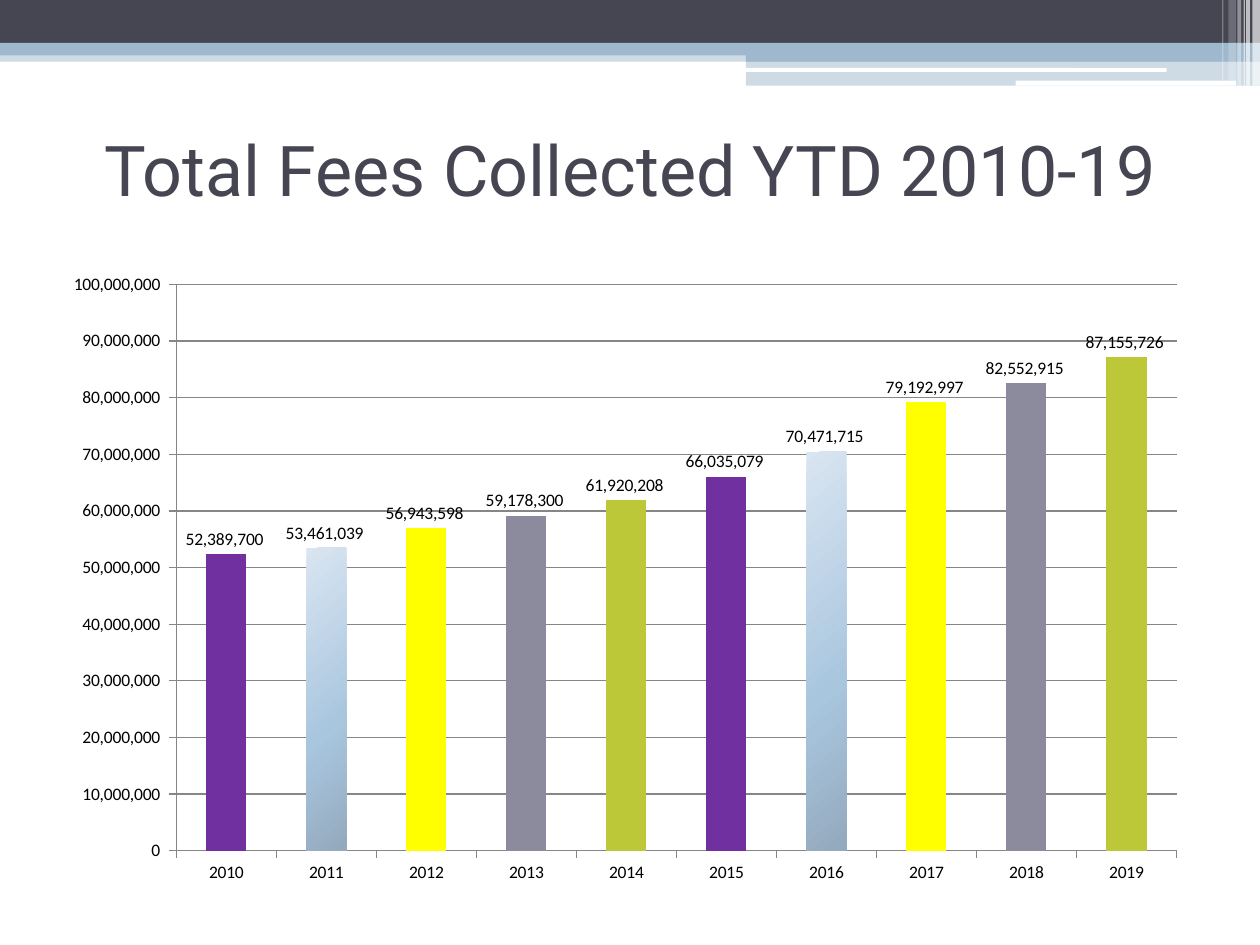
"""Build the slide with the yearly fee totals as a column chart."""
import copy

import pptx
import pptx.chart.data
import pptx.dml.color
import pptx.enum.chart
import pptx.enum.shapes
import pptx.enum.text
import pptx.oxml
import pptx.oxml.ns
import pptx.util
from lxml import etree

WIDTH, HEIGHT = 10, 7.5
TITLE = "Total Fees Collected YTD 2010-19"
INK, SKY, WHITE, AXIS = "464653", "9FB8CD", "FFFFFF", "868686"
NUMBER_FORMAT = "#,##0_);\\(#,##0\\)"
FEES = {
    "2010": 52389700, "2011": 53461039, "2012": 56943598, "2013": 59178300,
    "2014": 61920208, "2015": 66035079, "2016": 70471715, "2017": 79192997,
    "2018": 82552915, "2019": 87155726,
}
GRADIENT = [(0, "D9E5F1"), (0.6, "A9C6DF"), (1, "93A9BD")]
COLUMN_CYCLE = ["7030A0", GRADIENT, "FFFF00", "8B8B9D", "BCC838"]
PLOT_AREA = {"x": 0.1, "y": 0.064, "w": 0.882, "h": 0.853}
BANDS = [
    (0, 0.4, 10, 0.09, SKY, 50),
    (0, 0, 10, 0.34, INK, 100),
    (0, 0.34, 10, 0.1, SKY, 100),
    (5.92, 0.39, 4.08, 0.1, SKY, 100),
    (5.92, 0.48, 4.08, 0.2, SKY, 50),
]
ROUNDED_LINES = [(5.91, 0.54, 3.35, 0.03, WHITE, 100), (8.06, 0.64, 1.75, 0.04, WHITE, 100)]
STRIPES = [
    (9.94, 0.06, 0.68, 65), (9.89, 0.03, 0.68, 65), (9.87, 0.01, 0.68, 60),
    (9.82, 0.03, 0.68, 40), (9.75, 0.06, 0.64, 20), (9.7, 0.01, 0.64, 30),
]


def color(value):
    return pptx.dml.color.RGBColor.from_string(value)


def box(*lengths):
    return [pptx.util.Inches(length) for length in lengths]


def style_font(font, name, size, value):
    font.name, font.size = name, pptx.util.Pt(size)
    font.color.rgb = color(value)


def add_bar(slide, kind, left, top, width, height, fill, opacity):
    shape = slide.shapes.add_shape(kind, *box(left, top, width, height))
    shape.shadow.inherit = False
    shape.line.fill.background()
    shape.fill.solid()
    shape.fill.fore_color.rgb = color(fill)
    if opacity < 100:
        rgb = shape.fill._xPr.find(".//" + pptx.oxml.ns.qn("a:srgbClr"))
        etree.SubElement(rgb, pptx.oxml.ns.qn("a:alpha"), val=str(opacity * 1000))


def add_header(slide):
    shapes = pptx.enum.shapes.MSO_SHAPE
    for band in BANDS:
        add_bar(slide, shapes.RECTANGLE, *band)
    for line in ROUNDED_LINES:
        add_bar(slide, shapes.ROUNDED_RECTANGLE, *line)
    for left, width, height, opacity in STRIPES:
        add_bar(slide, shapes.RECTANGLE, left, 0, width, height, WHITE, opacity)


def add_title(slide):
    frame = slide.shapes.add_textbox(*box(0.5, 0.75, 9, 1.17)).text_frame
    frame.word_wrap = True
    frame.vertical_anchor = pptx.enum.text.MSO_ANCHOR.MIDDLE
    frame.text = TITLE
    paragraph = frame.paragraphs[0]
    paragraph.alignment = pptx.enum.text.PP_ALIGN.CENTER
    style_font(paragraph.runs[0].font, "Roboto", 40, INK)


def fill_column(fill, paint):
    if isinstance(paint, str):
        fill.solid()
        fill.fore_color.rgb = color(paint)
        return
    fill.gradient()
    fill.gradient_angle = 310
    first = fill.gradient_stops[0]._gs
    first.addnext(copy.deepcopy(first))
    for stop, (position, value) in zip(fill.gradient_stops, paint):
        stop.position = position
        stop.color.rgb = color(value)


def place_plot(chart):
    plot_area = chart._chartSpace.chart.plotArea
    for old in plot_area.findall(pptx.oxml.ns.qn("c:layout")):
        plot_area.remove(old)
    layout = etree.Element(pptx.oxml.ns.qn("c:layout"))
    manual = etree.SubElement(layout, pptx.oxml.ns.qn("c:manualLayout"))
    settings = {"layoutTarget": "inner", "xMode": "edge", "yMode": "edge", **PLOT_AREA}
    for name, value in settings.items():
        etree.SubElement(manual, pptx.oxml.ns.qn("c:" + name), val=str(value))
    plot_area.insert(0, layout)


def add_chart(slide):
    data = pptx.chart.data.CategoryChartData(number_format=NUMBER_FORMAT)
    data.categories = list(FEES)
    data.add_series("Series 1", list(FEES.values()))
    kind = pptx.enum.chart.XL_CHART_TYPE.COLUMN_CLUSTERED
    chart = slide.shapes.add_chart(kind, *box(0.5, 1.92, 9, 5.27), data).chart
    chart.has_legend = chart.has_title = False
    style_font(chart.font, "Calibri", 10, "000000")
    place_plot(chart)

    value_axis = chart.value_axis
    value_axis.minimum_scale, value_axis.maximum_scale = 0, 100000000
    value_axis.major_unit = 10000000
    value_axis.tick_labels.number_format = NUMBER_FORMAT
    value_axis.tick_labels.number_format_is_linked = False
    value_axis.has_major_gridlines = True
    for axis in (chart.category_axis, value_axis):
        axis.major_tick_mark = pptx.enum.chart.XL_TICK_MARK.OUTSIDE
        style_font(axis.tick_labels.font, "Calibri", 10, "000000")
    for part in (chart.category_axis, value_axis, value_axis.major_gridlines):
        part.format.line.color.rgb = color(AXIS)
        part.format.line.width = pptx.util.Pt(0.75)

    plot = chart.plots[0]
    plot.gap_width, plot.vary_by_categories = 150, False
    series = plot.series[0]
    for index in range(len(FEES)):
        paint = COLUMN_CYCLE[index % len(COLUMN_CYCLE)]
        fill_column(series.points[index].format.fill, paint)
    labels = series.data_labels
    labels.show_value = True
    labels.number_format, labels.number_format_is_linked = NUMBER_FORMAT, False
    labels.position = pptx.enum.chart.XL_LABEL_POSITION.OUTSIDE_END
    style_font(labels.font, "Calibri", 10, "000000")


def main():
    presentation = pptx.Presentation()
    presentation.slide_width, presentation.slide_height = box(WIDTH, HEIGHT)
    slide = presentation.slides.add_slide(presentation.slide_layouts[6])
    add_header(slide)
    add_title(slide)
    add_chart(slide)
    presentation.save("out.pptx")


if __name__ == "__main__":
    main()
